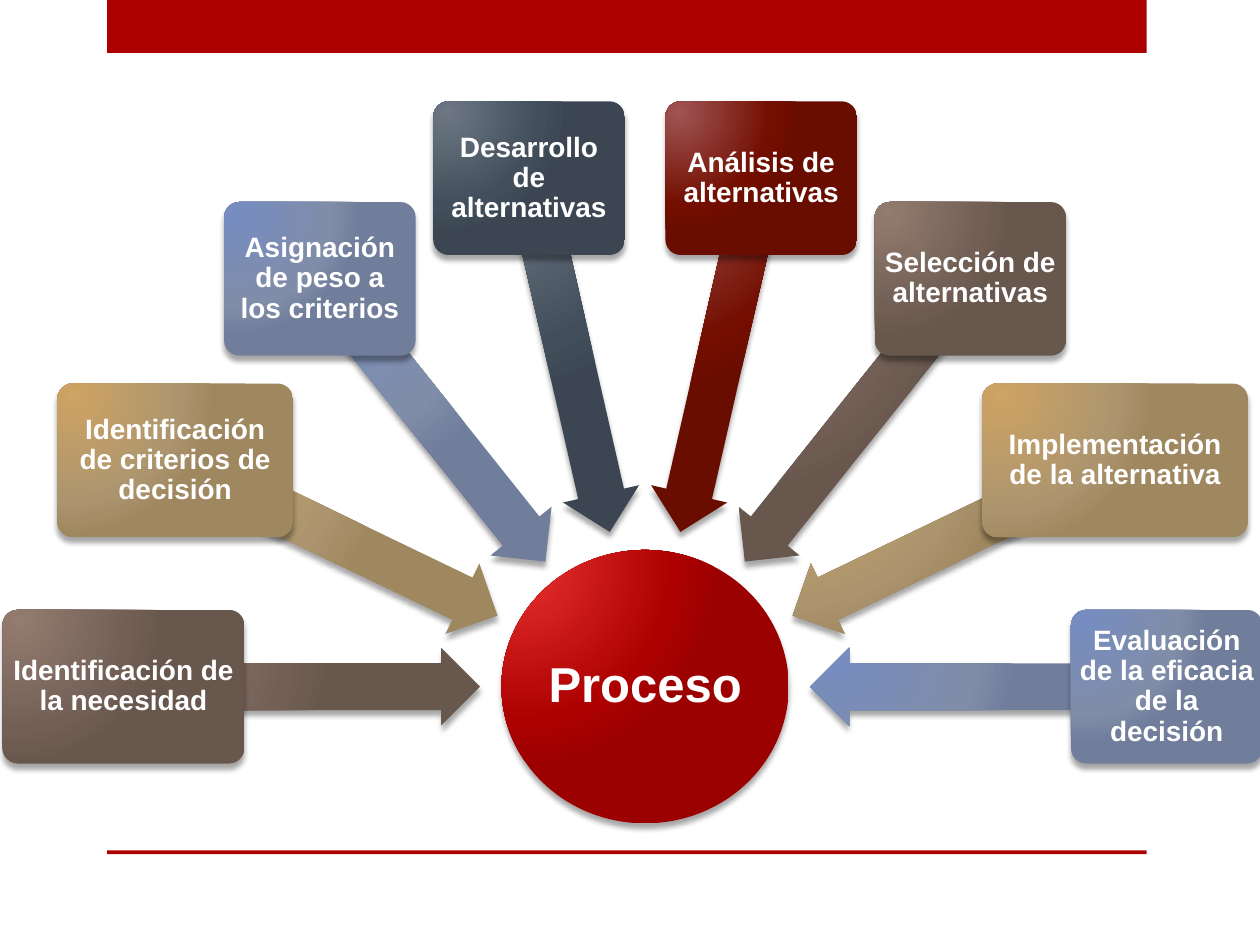
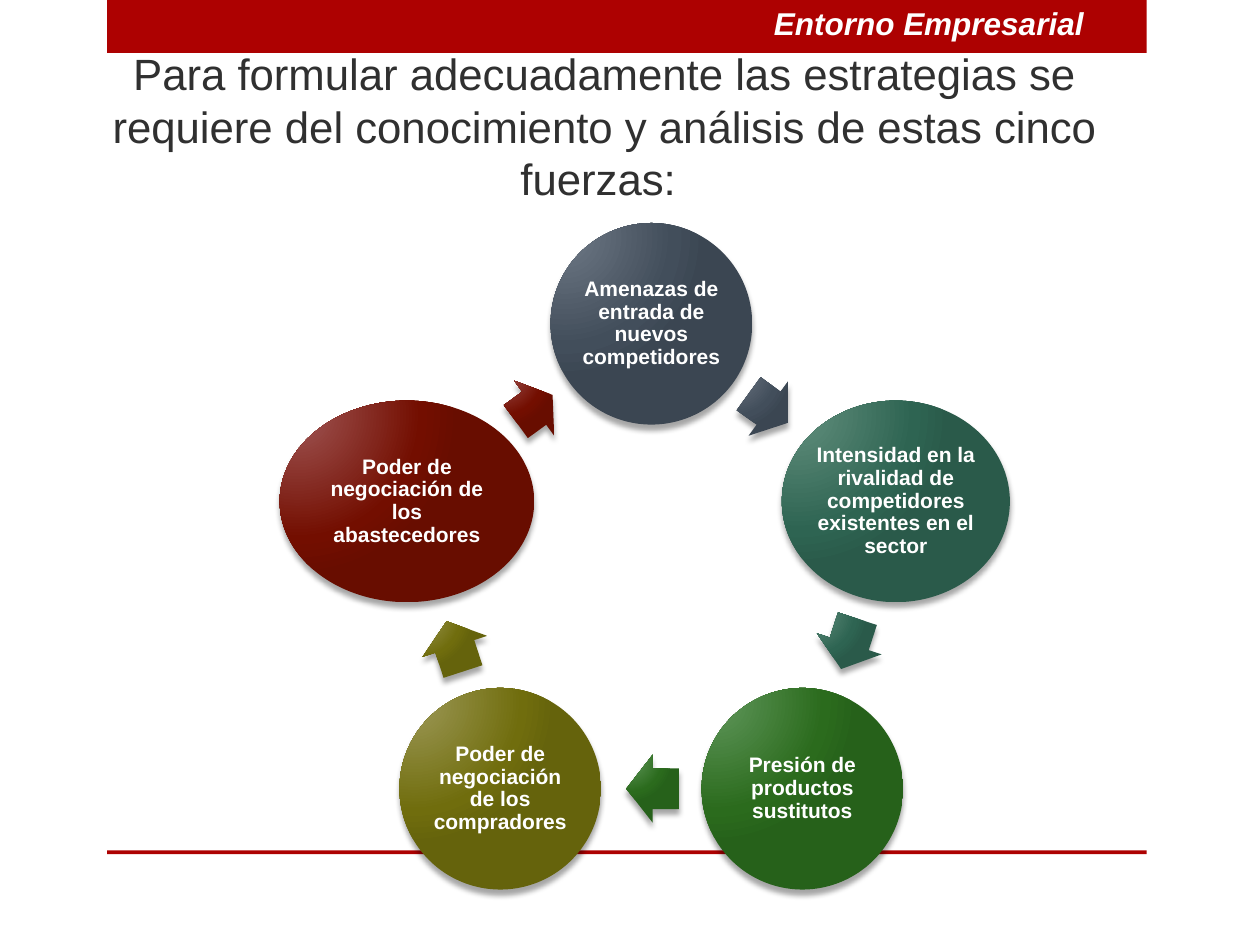
from dataclasses import dataclass
from math import cos, pi, sin
from typing import NamedTuple

from lxml import etree
from pptx import Presentation
from pptx.dml.color import RGBColor
from pptx.enum import shapes as s
from pptx.enum import text as t
from pptx.oxml import ns
from pptx.util import Inches, Pt


class Gradient(NamedTuple):
    light: str
    middle: str
    dark: str


@dataclass(frozen=True)
class Theme:
    font: str = "Arial"
    red: str = "AD0101"
    white: str = "FFFFFF"
    ink: str = "303030"
    process: Gradient = Gradient("E62F2F", "AD0101", "9C0101")
    brown: Gradient = Gradient("947B6F", "726056", "67574D")
    sand: Gradient = Gradient("CEA363", "AC956E", "9F875F")
    blue: Gradient = Gradient("778DC1", "808DA9", "707E9B")
    slate: Gradient = Gradient("6D7784", "424E5B", "3B4652")
    maroon: Gradient = Gradient("9F5554", "730E00", "680D00")
    teal: Gradient = Gradient("618E7C", "2E6452", "2A5A4A")
    green: Gradient = Gradient("5F965A", "2B6B1D", "26611A")
    olive: Gradient = Gradient("9C9856", "706D0D", "65630C")
    hub_size: int = 28
    title_size: int = 25
    header_size: int = 18
    step_size: int = 16
    force_size: int = 12


THEME = Theme()


class Point(NamedTuple):
    x: float
    y: float


class Step(NamedTuple):
    text: str
    gradient: Gradient
    box_width: float
    arrow_length: float


class Force(NamedTuple):
    text: str
    gradient: Gradient
    width: float
    arrow_center: Point
    arrow_length: float


STEPS = [
    Step("Identificación de la necesidad", THEME.brown, 1.92, 2.83),
    Step("Identificación de criterios de decisión", THEME.sand, 1.87, 2.84),
    Step("Asignación de peso a los criterios", THEME.blue, 1.52, 2.87),
    Step("Desarrollo de alternativas", THEME.slate, 1.52, 2.88),
    Step("Análisis de alternativas", THEME.maroon, 1.52, 2.88),
    Step("Selección de alternativas", THEME.brown, 1.52, 2.87),
    Step("Implementación de la alternativa", THEME.sand, 2.11, 2.84),
    Step("Evaluación de la eficacia de la decisión", THEME.blue, 1.52, 2.83),
]
FORCES = [
    Force("Amenazas de entrada de nuevos competidores", THEME.slate, 1.6, Point(6.1, 3.24), 0.39),
    Force("Intensidad en la rivalidad de competidores existentes en el sector",
          THEME.teal, 1.81, Point(6.74, 5.11), 0.42),
    Force("Presión de productos sustitutos", THEME.green, 1.6, Point(5.18, 6.26), 0.42),
    Force("Poder de negociación de los compradores", THEME.olive, 1.6, Point(3.61, 5.13), 0.42),
    Force("Poder de negociación de los abastecedores", THEME.maroon, 2.02, Point(4.24, 3.24), 0.36),
]
HUB = Point(5.12, 5.45)
STEP_RADIUS = 4.14
CYCLE = Point(5.17, 4.61)
CYCLE_RADIUS = 2.04


def on_circle(center: Point, radius: float, angle: float) -> Point:
    return Point(center.x + radius * cos(angle), center.y + radius * sin(angle))


def write(shape, text: str, size: int, color: str, align=t.PP_ALIGN.CENTER,
          inset: float | None = None, spacing: float = 1.0,
          bold: bool = False, italic: bool = False) -> None:
    frame = shape.text_frame
    frame.word_wrap = True
    frame.vertical_anchor = t.MSO_ANCHOR.MIDDLE
    if inset is not None:
        frame.margin_left = frame.margin_right = Inches(inset)
        frame.margin_top = frame.margin_bottom = Inches(inset)
    paragraph = frame.paragraphs[0]
    paragraph.text = text
    paragraph.alignment = align
    paragraph.line_spacing = spacing
    font = paragraph.font
    font.name = THEME.font
    font.size = Pt(size)
    font.bold = bold
    font.italic = italic
    font.color.rgb = RGBColor.from_string(color)


def add_band(slide, left: float, top: float, width: float, height: float):
    band = slide.shapes.add_shape(s.MSO_SHAPE.RECTANGLE, Inches(left), Inches(top),
                                  Inches(width), Inches(height))
    band.fill.solid()
    band.fill.fore_color.rgb = RGBColor.from_string(THEME.red)
    band.line.fill.background()
    band.shadow.inherit = False
    return band


def add_child(parent, tag: str, **attributes: str):
    return etree.SubElement(parent, ns.qn(tag), attributes)


def apply_glossy_style(shape, gradient: Gradient) -> None:
    shape.line.fill.background()
    shape.fill.gradient()
    properties = shape.element.spPr
    fill = properties.find(ns.qn("a:gradFill"))
    fill.clear()
    fill.set("rotWithShape", "0")
    stops = add_child(fill, "a:gsLst")
    for position, color in zip((0, 76, 100), gradient):
        stop = add_child(stops, "a:gs", pos=str(position * 1000))
        add_child(stop, "a:srgbClr", val=color)
    path_fill = add_child(fill, "a:path", path="circle")
    add_child(path_fill, "a:fillToRect", l="15000", t="15000", r="100000", b="100000")
    shape.shadow.inherit = False
    effects = properties.find(ns.qn("a:effectLst"))
    shadow = add_child(effects, "a:outerShdw", blurRad=str(Pt(3)), dist=str(Pt(3)),
                       dir="5400000", rotWithShape="0")
    shadow_color = add_child(shadow, "a:srgbClr", val="000000")
    add_child(shadow_color, "a:alpha", val="35000")


def add_glossy(slide, kind, center: Point, width: float, height: float, gradient: Gradient,
               adjustments: tuple[float, ...] = (), rotation: float = 0):
    shape = slide.shapes.add_shape(kind, Inches(center.x - width / 2),
                                   Inches(center.y - height / 2), Inches(width), Inches(height))
    for index, value in enumerate(adjustments):
        shape.adjustments[index] = value
    shape.rotation = rotation
    apply_glossy_style(shape, gradient)
    return shape


def add_base_slide(presentation):
    slide = presentation.slides.add_slide(presentation.slide_layouts[6])
    add_band(slide, 0.85, 0, 8.25, 0.42)
    add_band(slide, 0.85, 6.75, 8.25, 0.03)
    return slide


def build_process_slide(presentation) -> None:
    slide = add_base_slide(presentation)
    hub = add_glossy(slide, s.MSO_SHAPE.OVAL, HUB, 2.28, 2.17, THEME.process)
    write(hub, "Proceso", THEME.hub_size, THEME.white, inset=0.02, spacing=0.9, bold=True)
    for index, step in enumerate(STEPS):
        turn = index / (len(STEPS) - 1)
        angle = pi * (1 + turn)
        arrow_center = on_circle(HUB, STEP_RADIUS - step.arrow_length / 2, angle)
        add_glossy(slide, s.MSO_SHAPE.LEFT_ARROW, arrow_center, step.arrow_length, 0.62,
                   step.gradient, (0.6, 0.5), (180 + 180 * turn) % 360)
        box = add_glossy(slide, s.MSO_SHAPE.ROUNDED_RECTANGLE,
                         on_circle(HUB, STEP_RADIUS, angle), step.box_width, 1.22,
                         step.gradient, (0.1,))
        write(box, step.text, THEME.step_size, THEME.white, inset=0.03, spacing=0.9, bold=True)


def build_forces_slide(presentation) -> None:
    slide = add_base_slide(presentation)
    title = slide.shapes.add_textbox(Inches(0.67), Inches(-0.42), Inches(8.25), Inches(2.84))
    write(title, "Para formular adecuadamente las estrategias se requiere del conocimiento "
          "y análisis de estas cinco fuerzas: ", THEME.title_size, THEME.ink)
    turn = 360 / len(FORCES)
    for index, force in enumerate(FORCES):
        center = on_circle(CYCLE, CYCLE_RADIUS, 2 * pi * index / len(FORCES) - pi / 2)
        circle = add_glossy(slide, s.MSO_SHAPE.OVAL, center, force.width, 1.6, force.gradient)
        write(circle, force.text, THEME.force_size, THEME.white, inset=0, spacing=0.9, bold=True)
        add_glossy(slide, s.MSO_SHAPE.RIGHT_ARROW, force.arrow_center, force.arrow_length, 0.54,
                   force.gradient, (0.6, 0.5), turn * (index + 0.5))
    header = add_band(slide, 0.98, 0, 7.72, 0.36)
    write(header, "Entorno Empresarial", THEME.header_size, THEME.white,
          align=t.PP_ALIGN.RIGHT, bold=True, italic=True)


def main() -> None:
    presentation = Presentation()
    presentation.slide_width = Inches(10)
    presentation.slide_height = Inches(7.5)
    build_process_slide(presentation)
    build_forces_slide(presentation)
    presentation.save("out.pptx")


if __name__ == "__main__":
    main()
